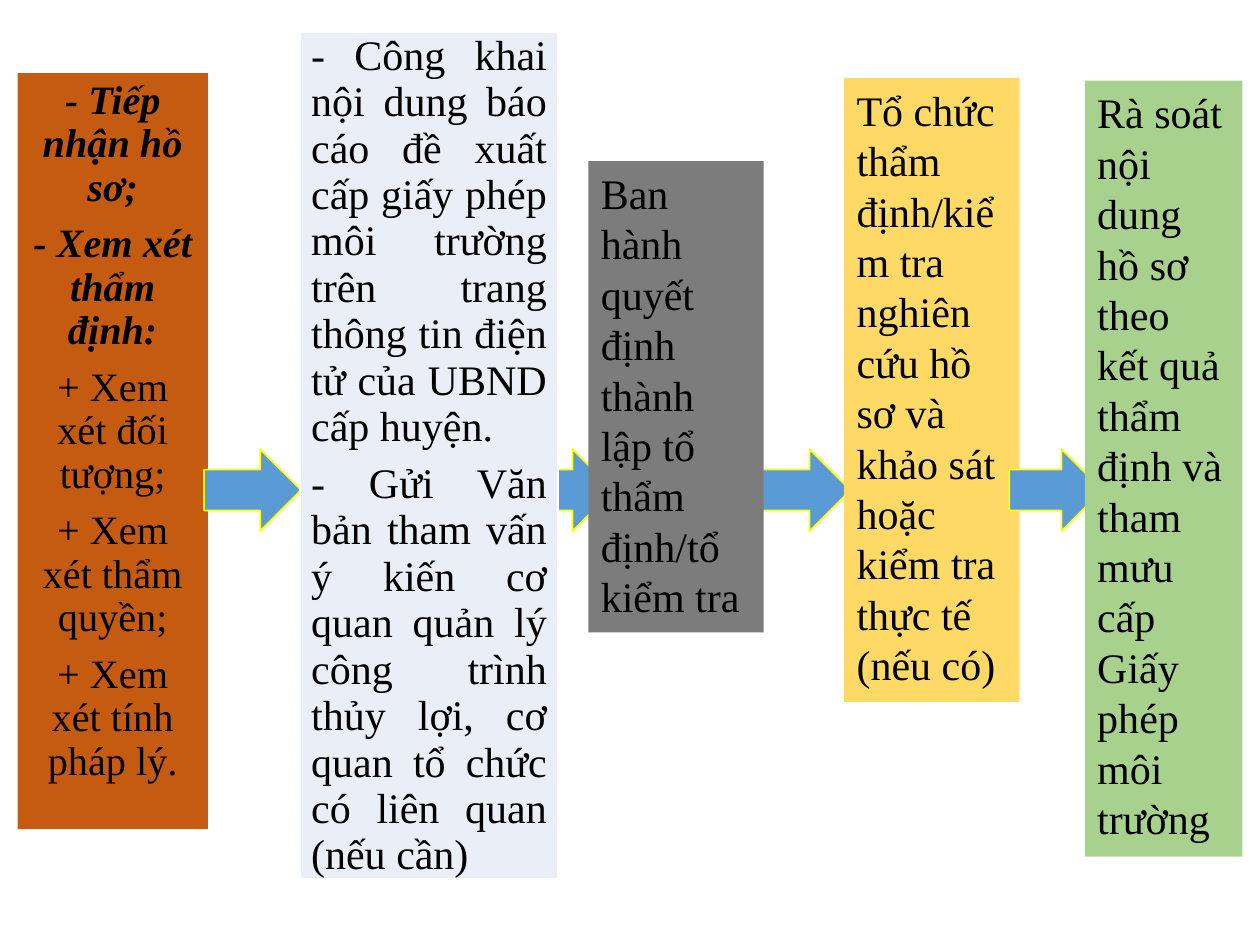
from lxml import etree
from pptx import Presentation
from pptx.dml.color import RGBColor
from pptx.enum.shapes import MSO_SHAPE
from pptx.enum.text import MSO_ANCHOR, MSO_AUTO_SIZE, PP_ALIGN
from pptx.oxml.ns import qn
from pptx.util import Inches, Pt

RECT, ARROW = MSO_SHAPE.RECTANGLE, MSO_SHAPE.RIGHT_ARROW
LEFT, CENTER, JUSTIFY = PP_ALIGN.LEFT, PP_ALIGN.CENTER, PP_ALIGN.JUSTIFY
FONT, TEXT_SIZE = "Times New Roman", 24
BLACK, WHITE, YELLOW, BLUE = "000000", "FFFFFF", "FFFF00", "5B9BD5"

# Grid of 100 columns by 75 rows
WIDTH, HEIGHT = Inches(10), Inches(7.5)
COL, ROW = WIDTH / 100, HEIGHT / 75
ARROW_ROW, ARROW_ROWS = 35.65, 6.5

INTAKE = [
    ("- Tiếp nhận hồ sơ;", True),
    ("- Xem xét thẩm định:", True),
    ("+ Xem xét đối tượng;", False),
    ("+ Xem xét thẩm quyền;", False),
    ("+ Xem xét tính pháp lý.", False),
]
CONSULTATION = [
    "- Công khai nội dung báo cáo đề xuất cấp giấy phép môi trường trên "
    "trang thông tin điện tử của UBND cấp huyện.",
    "- Gửi Văn bản tham vấn ý kiến cơ quan quản lý công trình thủy lợi, "
    "cơ quan tổ chức có liên quan (nếu cần)",
]
DECISION = "Ban hành quyết định thành lập tổ thẩm định/tổ kiểm tra"
APPRAISAL = ("Tổ chức thẩm định/kiểm tra nghiên cứu hồ sơ và khảo sát "
             "hoặc kiểm tra thực tế (nếu có)")
LICENCE = ("Rà soát nội dung hồ sơ theo kết quả thẩm định và tham mưu "
           "cấp Giấy phép môi trường")


def rgb(value):
    return RGBColor.from_string(value)


def grid(col, row, cols, rows):
    return [round(n) for n in (col * COL, row * ROW, cols * COL, rows * ROW)]


def paint(target, color):
    target.fill.solid()
    target.fill.fore_color.rgb = rgb(color)


def write(tf, texts, align, size=TEXT_SIZE, before=0):
    """Write one paragraph per text and return the paragraphs."""
    tf.word_wrap = True
    for i, text in enumerate(texts):
        p = tf.paragraphs[0] if i == 0 else tf.add_paragraph()
        p.text = text
        p.alignment = align
        p.space_before = Pt(before)
        p.font.name, p.font.size = FONT, Pt(size)
        p.font.color.rgb = rgb(BLACK)
    return tf.paragraphs


def intake_panel(slide, box):
    sp = slide.placeholders[1]
    sp.left, sp.top, sp.width, sp.height = grid(*box)
    paint(sp, "C55A11")
    tf = sp.text_frame
    tf.auto_size = MSO_AUTO_SIZE.NONE
    tf.vertical_anchor = MSO_ANCHOR.TOP
    texts = [text for text, _ in INTAKE]
    for p, (_, strong) in zip(write(tf, texts, CENTER, 23, 7.5), INTAKE):
        p.line_spacing = 0.9
        p.font.bold = p.font.italic = strong


def step_arrow(slide, col, cols):
    sp = slide.shapes.add_shape(ARROW, *grid(col, ARROW_ROW, cols, ARROW_ROWS))
    sp.shadow.inherit = False
    paint(sp, BLUE)
    sp.line.color.rgb = rgb(YELLOW)
    sp.line.width = Pt(1)


def consultation_table(slide, box):
    table = slide.shapes.add_table(1, 1, *grid(*box)).table
    table.first_row = table.horz_banding = False
    cell = table.cell(0, 0)
    paint(cell, "EAEFF7")
    cell.margin_left = cell.margin_right = Inches(0.09)
    cell.margin_top = cell.margin_bottom = 0
    write(cell.text_frame, CONSULTATION, JUSTIFY, before=6)
    # Borders come before the fill in the cell properties
    tc_pr = cell._tc.get_or_add_tcPr()
    for i, side in enumerate(("a:lnL", "a:lnR", "a:lnT", "a:lnB")):
        ln = etree.Element(qn(side), w=str(Pt(1)))
        fill = etree.SubElement(ln, qn("a:solidFill"))
        etree.SubElement(fill, qn("a:srgbClr"), val=WHITE)
        tc_pr.insert(i, ln)


def step_panel(slide, box, color, text):
    sp = slide.shapes.add_shape(RECT, *grid(*box))
    sp.shadow.inherit = False
    paint(sp, color)
    sp.line.fill.background()
    tf = sp.text_frame
    tf.vertical_anchor = MSO_ANCHOR.TOP
    tf.auto_size = MSO_AUTO_SIZE.SHAPE_TO_FIT_TEXT
    write(tf, [text], LEFT)


def build():
    prs = Presentation()
    prs.slide_width, prs.slide_height = WIDTH, HEIGHT
    slide = prs.slides.add_slide(prs.slide_layouts[0])
    title = slide.shapes.title._element
    title.getparent().remove(title)

    # Steps from left to right, with the arrows tucked under the panels
    intake_panel(slide, (1.4, 5.8, 15.1, 60))
    for col, cols in ((60.1, 7.4), (16.2, 7.7), (40.1, 8.6)):
        step_arrow(slide, col, cols)
    consultation_table(slide, (23.8, 2.6, 20.5, 60))
    step_panel(slide, (46.7, 12.8, 13.9, 37.4), "7C7C7C", DECISION)
    step_panel(slide, (67, 6.2, 13.9, 49.5), "FFD966", APPRAISAL)
    step_arrow(slide, 80.1, 7.4)
    step_panel(slide, (86.1, 6.4, 12.5, 61.6), "A9D18E", LICENCE)
    prs.save("out.pptx")


if __name__ == "__main__":
    build()
